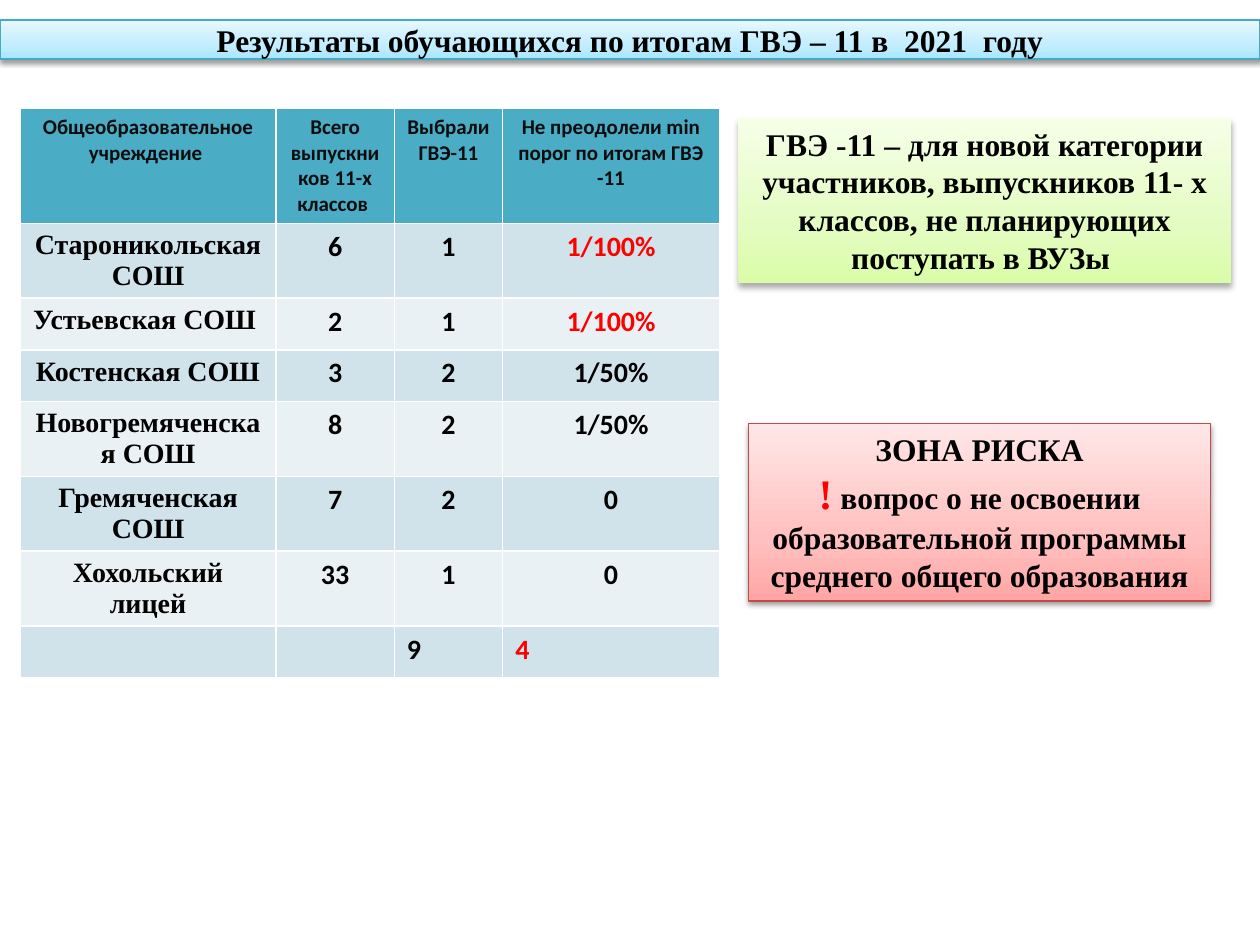
from dataclasses import dataclass
from typing import NamedTuple

from lxml.etree import SubElement
from pptx import Presentation
from pptx.dml.color import RGBColor
from pptx.enum.shapes import MSO_SHAPE
from pptx.enum.text import MSO_ANCHOR, MSO_AUTO_SIZE, PP_ALIGN
from pptx.oxml.ns import qn
from pptx.util import Inches, Pt


@dataclass(frozen=True)
class Theme:
    serif: str = "Times New Roman"
    sans: str = "Calibri"
    ink: str = "000000"
    alert: str = "FF0000"
    label: str = "0D0D0D"
    header: str = "4BACC6"
    bands: tuple = ("D0E3EA", "E9F1F5")
    blue: tuple = ("A7E6FF", "C1EDFF", "E7F8FF")
    green: tuple = ("DAFDA7", "E4FCC2", "F5FFE7")
    red: tuple = ("FFA6A5", "FFC0BF", "FFE7E7")
    blue_edge: str = "46AAC5"
    red_edge: str = "BF4C48"
    small: int = 12
    cell: int = 16
    text: int = 18
    mark: int = 24


class Font(NamedTuple):
    face: str
    size: int
    color: str


class Shade(NamedTuple):
    alpha: int
    blur: float
    dist: float


class Panel(NamedTuple):
    box: tuple
    stops: tuple
    edge: str | None
    shade: Shade
    lines: list


THEME = Theme()
BODY = Font(THEME.serif, THEME.text, THEME.ink)
MARK = Font(THEME.serif, THEME.mark, THEME.alert)
NAME = Font(THEME.serif, THEME.cell, THEME.ink)
COUNT = Font(THEME.sans, THEME.cell, THEME.ink)
ALERT = Font(THEME.sans, THEME.cell, THEME.alert)
HEAD = Font(THEME.sans, THEME.small, THEME.label)

SOFT = Shade(38, 3.1, 1.6)
DEEP = Shade(32, 3.5, 2.2)

TITLE = Panel((0, 0.16, 10, 0.31), THEME.blue, THEME.blue_edge, SOFT,
              [[("Результаты обучающихся по итогам ГВЭ – 11 в  2021  году", BODY)]])
NOTES = [
    Panel((5.86, 0.94, 3.91, 1.31), THEME.green, None, DEEP,
          [[("ГВЭ -11 – для новой категории участников, выпускников 11- х "
             "классов, не планирующих поступать в ВУЗы ", BODY)]]),
    Panel((5.94, 3.36, 3.67, 1.41), THEME.red, THEME.red_edge, SOFT,
          [[("ЗОНА РИСКА", BODY)],
           [("!", MARK),
            (" вопрос о не освоении образовательной программы "
             "среднего общего образования", BODY)]]),
]

GRID = (0.16, 0.86, 5.55, 3.5)
COLS = (2.03, 0.94, 0.86, 1.72)
HEAD_ROW, BODY_ROW = 0.63, 0.41
ROWS = [
    ("Общеобразовательное учреждение ", "Всего выпускников 11-х классов ",
     "Выбрали ГВЭ-11", "Не преодолели min порог по итогам ГВЭ -11"),
    ("Староникольская СОШ", "6", "1", "1/100%"),
    ("Устьевская СОШ ", "2", "1", "1/100%"),
    ("Костенская СОШ", "3", "2", "1/50%"),
    ("Новогремяченская СОШ", "8", "2", "1/50%"),
    ("Гремяченская СОШ", "7", "2", "0"),
    ("Хохольский лицей", "33", "1", "0"),
    ("", "", "9", "4"),
]
ALERTS = {(1, 3), (2, 3), (7, 3)}


def style(font, look: Font) -> None:
    font.name = look.face
    font.size = Pt(look.size)
    font.bold = True
    font.color.rgb = RGBColor.from_string(look.color)


def write(frame, lines: list) -> None:
    frame.text = "\n".join("".join(text for text, _ in line) for line in lines)
    for para, line in zip(frame.paragraphs, lines):
        para.alignment = PP_ALIGN.CENTER
        para.text = line[0][0]
        for text, _ in line[1:]:
            para.add_run().text = text
        for run, (_, look) in zip(para.runs, line):
            style(run.font, look)


def blend(shape, colors: tuple) -> None:
    """Fill with three colours running from the bottom edge to the top."""
    shape.fill.gradient()
    shape.fill.gradient_angle = 90
    stops = next(shape.element.iter(qn("a:gsLst")))
    for stop in list(stops):
        stops.remove(stop)
    for pos, color in zip((0, 35, 100), colors):
        stop = SubElement(stops, qn("a:gs"), pos=str(pos * 1000))
        SubElement(stop, qn("a:srgbClr"), val=color)


def cast(shape, shade: Shade) -> None:
    """Drop a black shadow straight down."""
    shape.shadow.inherit = False
    effects = next(shape.element.iter(qn("a:effectLst")))
    drop = SubElement(effects, qn("a:outerShdw"), blurRad=str(Pt(shade.blur)),
                      dist=str(Pt(shade.dist)), dir="5400000", rotWithShape="0")
    color = SubElement(drop, qn("a:srgbClr"), val=THEME.ink)
    SubElement(color, qn("a:alpha"), val=str(shade.alpha * 1000))


def dress(shape, panel: Panel) -> None:
    blend(shape, panel.stops)
    if panel.edge:
        shape.line.color.rgb = RGBColor.from_string(panel.edge)
        shape.line.width = Pt(0.75)
    else:
        shape.line.fill.background()
    cast(shape, panel.shade)
    shape.text_frame.word_wrap = True
    write(shape.text_frame, panel.lines)


def add_title(slide) -> None:
    title = slide.shapes.title
    title.left, title.top, title.width, title.height = map(Inches, TITLE.box)
    dress(title, TITLE)
    title.text_frame.auto_size = MSO_AUTO_SIZE.NONE
    title.text_frame.vertical_anchor = MSO_ANCHOR.MIDDLE


def add_note(slide, panel: Panel) -> None:
    shape = slide.shapes.add_shape(MSO_SHAPE.RECTANGLE, *map(Inches, panel.box))
    dress(shape, panel)
    shape.text_frame.auto_size = MSO_AUTO_SIZE.SHAPE_TO_FIT_TEXT
    shape.text_frame.vertical_anchor = MSO_ANCHOR.TOP


def pick(row: int, col: int) -> Font:
    if row == 0:
        return HEAD
    if (row, col) in ALERTS:
        return ALERT
    return NAME if col == 0 else COUNT


def add_grid(slide) -> None:
    table = slide.shapes.add_table(len(ROWS), len(COLS), *map(Inches, GRID)).table
    for col, width in zip(table.columns, COLS):
        col.width = Inches(width)
    last = len(ROWS) - 1
    for r, texts in enumerate(ROWS):
        table.rows[r].height = Inches(BODY_ROW if r else HEAD_ROW)
        tint = THEME.bands[(r - 1) % 2] if r else THEME.header
        for c, text in enumerate(texts):
            cell = table.cell(r, c)
            cell.fill.solid()
            cell.fill.fore_color.rgb = RGBColor.from_string(tint)
            if text:
                write(cell.text_frame, [[(text, pick(r, c))]])
                if r == last:
                    cell.text_frame.paragraphs[0].alignment = PP_ALIGN.LEFT


def main() -> None:
    deck = Presentation()
    deck.slide_width, deck.slide_height = Inches(10), Inches(7.5)
    slide = deck.slides.add_slide(deck.slide_layouts[5])
    add_grid(slide)
    for note in NOTES:
        add_note(slide, note)
    add_title(slide)
    deck.save("out.pptx")


if __name__ == "__main__":
    main()
